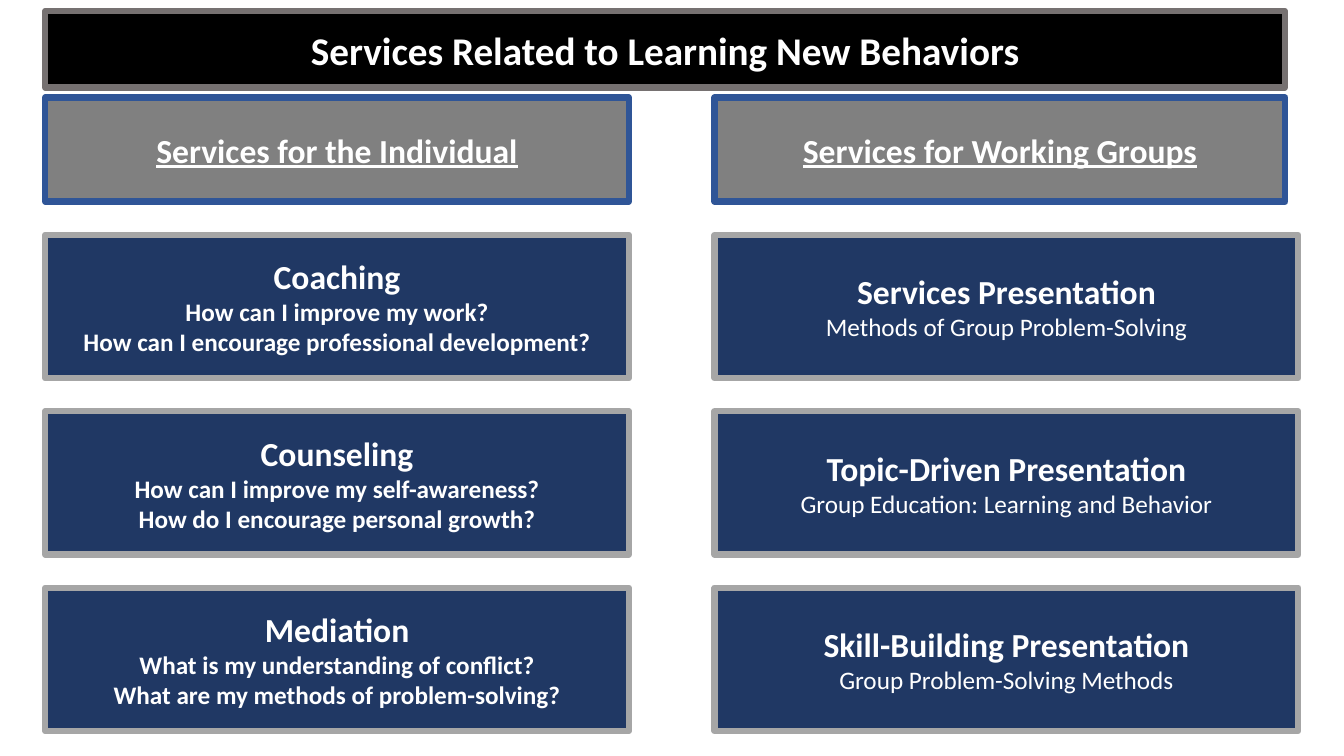
from pptx import Presentation
from pptx.dml.color import RGBColor
from pptx.enum import shapes, text
from pptx.util import Cm, Pt

HUES = {
    "white": "FFFFFF", "black": "000000", "taupe": "767171", "gray": "808080",
    "blue": "2F5597", "navy": "203864", "silver": "A6A6A6",
}
TITLE = {"size": Pt(28), "bold": True}
HEAD = {"size": Pt(24), "bold": True, "underline": True}
NAME = {"size": Pt(24), "bold": True}
ASK = {"size": Pt(18), "bold": True}
NOTE = {"size": Pt(18), "bold": False}

SOLO = [
    ("Coaching", "How can I improve my work?",
     "How can I encourage professional development?"),
    ("Counseling", "How can I improve my self-awareness?",
     "How do I encourage personal growth?"),
    ("Mediation", "What is my understanding of conflict?",
     "What are my methods of problem-solving?"),
]
TEAM = [
    ("Services Presentation", "Methods of Group Problem-Solving"),
    ("Topic-Driven Presentation", "Group Education: Learning and Behavior"),
    ("Skill-Building Presentation", "Group Problem-Solving Methods"),
]


def hue(name):
    return RGBColor.from_string(HUES[name])


def panel(slide, box, fill, edge, lines):
    """Draw a framed box in cm; lines holds (words, format) pairs."""
    rect = slide.shapes.add_shape(shapes.MSO_SHAPE.RECTANGLE, *map(Cm, box))
    rect.shadow.inherit = False
    rect.fill.solid()
    rect.fill.fore_color.rgb = hue(fill)
    rect.line.color.rgb = hue(edge)
    rect.line.width = Pt(4.5)
    frame = rect.text_frame
    frame.word_wrap = True
    frame.vertical_anchor = text.MSO_ANCHOR.MIDDLE
    for i, (words, form) in enumerate(lines):
        para = frame.add_paragraph() if i else frame.paragraphs[0]
        para.alignment = text.PP_ALIGN.CENTER
        run = para.add_run()
        run.text = words
        run.font.color.rgb = hue("white")
        for key, value in {"name": "Calibri", **form}.items():
            setattr(run.font, key, value)


def column(slide, box, wide, head, cards, form):
    """Place a heading of the given width over evenly spaced cards."""
    left, top, width, height = box
    panel(slide, (left, top, wide, 2.62), "gray", "blue", [(head, HEAD)])
    first, tall = 3.46, 3.61
    step = (height - first - tall) / (len(cards) - 1)
    for i, (name, *rest) in enumerate(cards):
        spot = (left, top + first + i * step, width, tall)
        lines = [(name, NAME)] + [(line, form) for line in rest]
        panel(slide, spot, "navy", "silver", lines)


def main():
    deck = Presentation()
    deck.slide_width, deck.slide_height = Cm(33.87), Cm(19.05)
    slide = deck.slides.add_slide(deck.slide_layouts[6])
    column(slide, (1.14, 2.46, 14.71, 15.96), 14.71,
           "Services for the Individual", SOLO, ASK)
    column(slide, (18.01, 2.46, 14.71, 15.96), 14.38,
           "Services for Working Groups", TEAM, NOTE)
    panel(slide, (1.14, 0.28, 31.24, 1.93), "black", "taupe",
          [("Services Related to Learning New Behaviors", TITLE)])
    deck.save("out.pptx")


if __name__ == "__main__":
    main()
